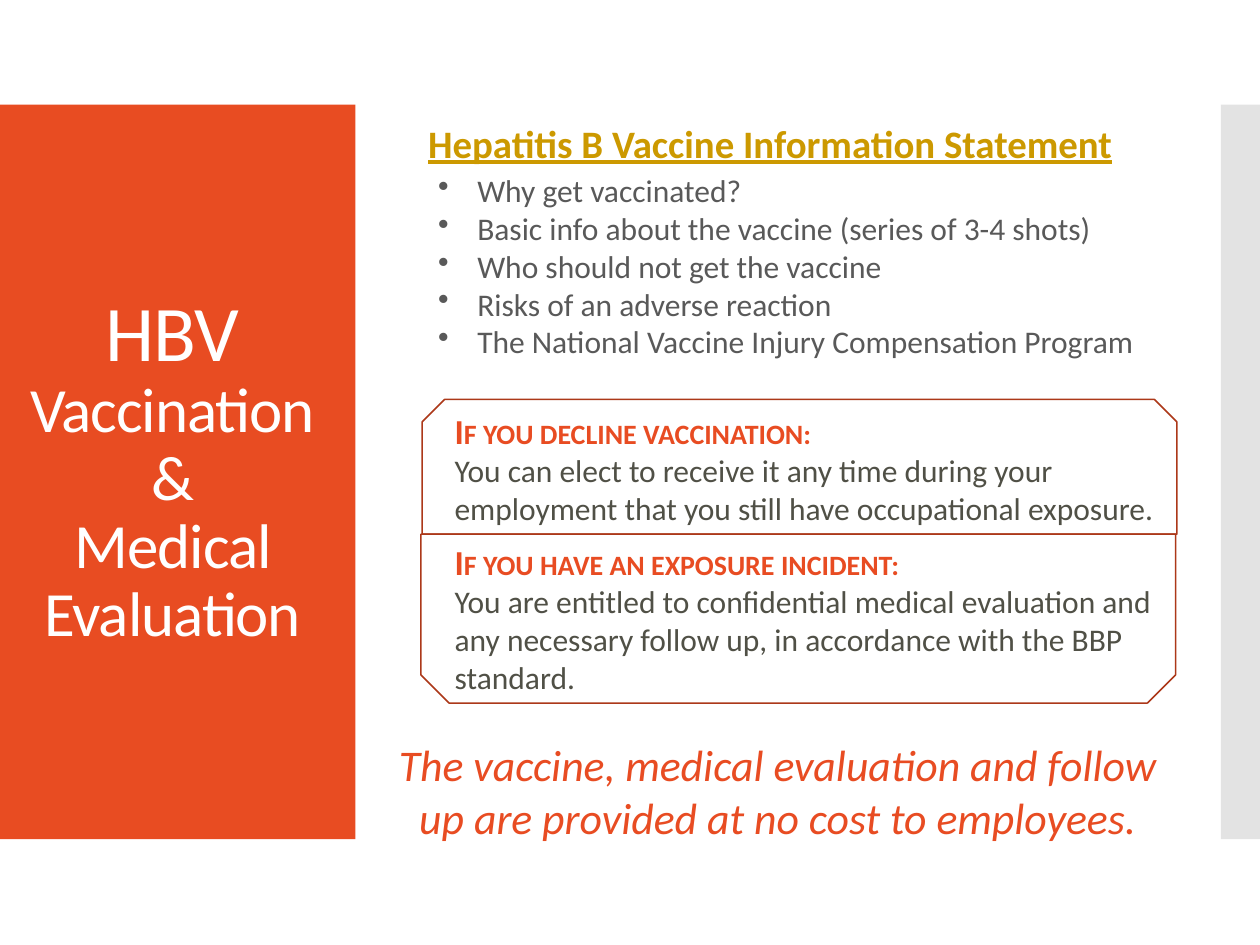
from pptx import Presentation
from pptx.dml.color import RGBColor
from pptx.enum.shapes import MSO_SHAPE
from pptx.enum.text import MSO_ANCHOR, MSO_AUTO_SIZE, PP_ALIGN
from pptx.oxml.ns import qn
from pptx.util import Inches, Pt
from lxml import etree

RECT, SNIP = MSO_SHAPE.RECTANGLE, MSO_SHAPE.SNIP_2_SAME_RECTANGLE
TOP, MIDDLE = MSO_ANCHOR.TOP, MSO_ANCHOR.MIDDLE
LEFT, CENTER = PP_ALIGN.LEFT, PP_ALIGN.CENTER
COLORS = {"accent": "E84C22", "gold": "CC9900", "gray": "595959", "body": "505046",
          "bar": "C8C8C8", "outline": "AC3819", "white": "FFFFFF"}


class Deck:
    font = "Calibri"
    columns, rows = 100, 75

    def __init__(self):
        self.prs = Presentation()
        self.prs.slide_width, self.prs.slide_height = Inches(10), Inches(7.5)
        self.s = self.prs.slides.add_slide(self.prs.slide_layouts[5])

    def box(self, x, y, w, h):
        col = self.prs.slide_width / self.columns
        row = self.prs.slide_height / self.rows
        return round(x * col), round(y * row), round(w * col), round(h * row)

    def color(self, name):
        return RGBColor.from_string(COLORS[name])

    def style(self, font, size, color, bold=False, italic=False, underline=False):
        font.name, font.size = self.font, Pt(size)
        font.bold, font.italic, font.underline = bold, italic, underline
        font.color.rgb = self.color(color)

    def bar(self, at, color, opacity=100):
        sp = self.s.shapes.add_shape(RECT, *self.box(*at))
        sp.shadow.inherit = False
        sp.fill.solid()
        sp.fill.fore_color.rgb = self.color(color)
        sp.line.fill.background()
        if opacity < 100:
            clr = sp._element.spPr.find(qn("a:solidFill"))[0]
            etree.SubElement(clr, qn("a:alpha")).set("val", str(opacity * 1000))

    def frame(self, at, flip=False):
        sp = self.s.shapes.add_shape(SNIP, *self.box(*at))
        sp.shadow.inherit = False
        sp.fill.background()
        sp.line.color.rgb = self.color("outline")
        sp.line.width = Pt(0.85)
        if flip:
            sp._element.spPr.xfrm.set("flipV", "1")

    def title(self, at, lines):
        sp = self.s.shapes.title
        self.s.shapes._spTree.append(sp._element)
        sp.left, sp.top, sp.width, sp.height = self.box(*at)
        tf = sp.text_frame
        tf.word_wrap, tf.auto_size = True, MSO_AUTO_SIZE.NONE
        tf.vertical_anchor = MIDDLE
        p = tf.paragraphs[0]
        p.alignment, p.line_spacing = CENTER, 0.9
        for i, (text, size) in enumerate(lines):
            if i:
                p.add_line_break()
            r = p.add_run()
            r.text = text
            self.style(r.font, size, "white")
            r._r.get_or_add_rPr().set("spc", "-60")

    def text(self, at, paragraphs, align=LEFT, spacing=None, bullet=False):
        tf = self.s.shapes.add_textbox(*self.box(*at)).text_frame
        tf.word_wrap, tf.vertical_anchor = True, TOP
        for i, (text, look) in enumerate(paragraphs):
            p = tf.add_paragraph() if i else tf.paragraphs[0]
            p.alignment, p.line_spacing = align, spacing
            look = dict(look)
            caps = look.pop("caps", False)
            r = p.add_run()
            r.text = text
            self.style(p.font, **look)
            if caps:
                r._r.get_or_add_rPr().set("cap", "small")
            if bullet:
                self.bullet(p)

    def bullet(self, p):
        p.level = 1
        pPr = p._p.get_or_add_pPr()
        pPr.set("marL", str(Inches(0.81)))
        pPr.set("indent", str(Inches(-0.31)))
        bu = etree.Element(qn("a:buChar"))
        bu.set("char", "•")
        pPr.find(qn("a:defRPr")).addprevious(bu)


def main():
    d = Deck()
    d.bar((0, 8.3, 28.2, 58.3), "accent")
    d.bar((96.9, 8.3, 3.1, 58.3), "bar", opacity=50)
    d.title((0.8, 12.3, 25.8, 50.3),
            [("HBV", 45), ("Vaccination", 36), ("&", 36), ("Medical Evaluation", 36)])

    heading = dict(size=22.2, color="gold", bold=True, underline=True)
    d.text((33, 9.4, 63.3, 7.2), [("Hepatitis B Vaccine Information Statement", heading)],
           spacing=0.9)

    topics = ["Why get vaccinated?",
              "Basic info about the vaccine (series of 3-4 shots)",
              "Who should not get the vaccine",
              "Risks of an adverse reaction",
              "The National Vaccine Injury Compensation Program"]
    topic = dict(size=18, color="gray")
    d.text((28.8, 13.1, 68.3, 16.2), [(t, topic) for t in topics], bullet=True)

    d.frame((33.5, 31.7, 59.9, 10.7))
    d.frame((33.4, 42.4, 59.9, 13.4), flip=True)
    lead = dict(size=20, color="accent", bold=True, caps=True)
    body = dict(size=18, color="body")
    cases = [
        ((35.1, 32, 61.6, 10.4), "If you decline vaccination:",
         "You can elect to receive it any time during your employment "
         "that you still have occupational exposure."),
        ((35.1, 42.4, 59.1, 13.5), "If you have an exposure incident:",
         "You are entitled to confidential medical evaluation and any necessary "
         "follow up, in accordance with the BBP standard."),
    ]
    for at, condition, right in cases:
        d.text(at, [(condition, lead), (right, body)])

    closing = dict(size=25, color="accent", italic=True)
    d.text((29.6, 58.1, 64.2, 9.4),
           [("The vaccine, medical evaluation and follow up are provided "
             "at no cost to employees.", closing)], align=CENTER)
    d.prs.save("out.pptx")


if __name__ == "__main__":
    main()
